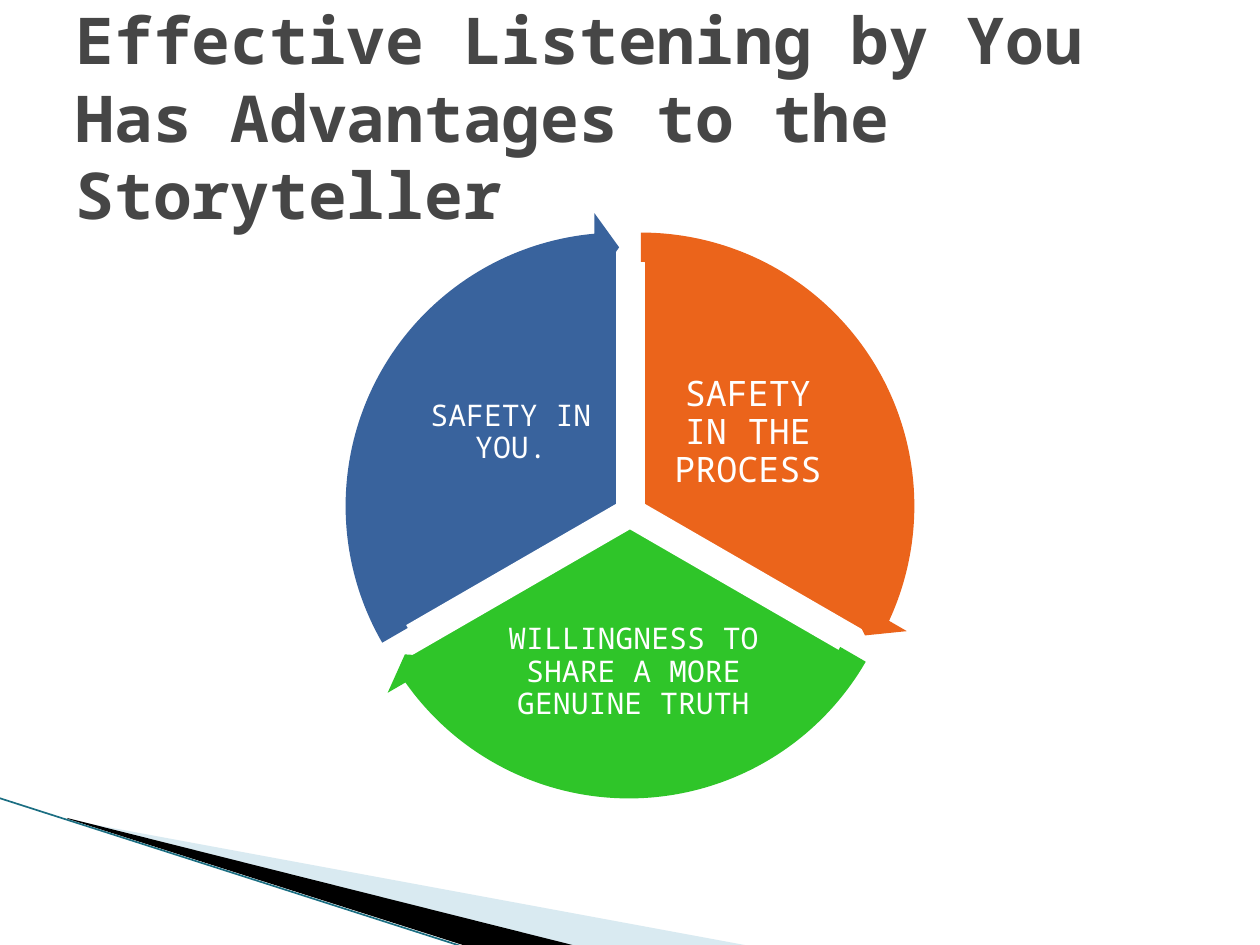
import pptx
import pptx.dml.color
import pptx.enum.shapes
import pptx.enum.text
import pptx.oxml
import pptx.oxml.ns
import pptx.util

SCALE = 914400 / 126
FONT = "Noto Sans Mono"
COLORS = {
    "title": "464646",
    "white": "FFFFFF",
    "black": "000000",
    "pale": "A0CBDC",
    "teal": "1B6E82",
    "orange": "EB641B",
    "green": "2FC529",
    "blue": "39639D",
}


def px(*values):
    return [pptx.util.Emu(round(value * SCALE)) for value in values]


def add_run(paragraph, text, size, color):
    run = paragraph.add_run()
    run.text = text
    run.font.name = FONT
    run.font.size = pptx.util.Pt(size)
    run.font.color.rgb = pptx.dml.color.RGBColor.from_string(COLORS[color])
    return run


presentation = pptx.Presentation()
presentation.slide_width, presentation.slide_height = px(1260, 945)
slide = presentation.slides.add_slide(presentation.slide_layouts[5])
shapes = slide.shapes

title = shapes.title
title.left, title.top, title.width, title.height = px(63, 38, 1134, 157)
title.text_frame.word_wrap = True
title.text_frame.auto_size = pptx.enum.text.MSO_AUTO_SIZE.NONE
title.text_frame.vertical_anchor = pptx.enum.text.MSO_ANCHOR.MIDDLE
paragraph = title.text_frame.paragraphs[0]
paragraph.alignment = pptx.enum.text.PP_ALIGN.LEFT
run = add_run(paragraph, "Effective Listening by You Has Advantages to the Storyteller", 36.9, "title")
run.font.bold = True

wedges = [
    ("pale", [(69, 820), (750, 946), (575, 946), (69, 819)]),
    ("black", [(67, 818), (576, 946), (469, 947), (68, 819)]),
]
for color, points in wedges:
    builder = shapes.build_freeform(*points[0], scale=SCALE)
    builder.add_line_segments(points[1:], close=True)
    wedge = builder.convert_to_shape()
    wedge.shadow.inherit = False
    wedge.fill.solid()
    wedge.fill.fore_color.rgb = pptx.dml.color.RGBColor.from_string(COLORS[color])
    wedge.line.fill.background()
    if color == "pale":
        color_element = wedge._element.spPr.find(".//" + pptx.oxml.ns.qn("a:srgbClr"))
        alpha = pptx.oxml.parse_xml(f'<a:alpha {pptx.oxml.ns.nsdecls("a")} val="40000"/>')
        color_element.append(alpha)

edge = shapes.add_connector(pptx.enum.shapes.MSO_CONNECTOR.STRAIGHT, *px(-1, 798, 467, 948))
edge.line.color.rgb = pptx.dml.color.RGBColor.from_string(COLORS["teal"])
edge.line.width = pptx.util.Pt(0.95)
edge._element.spPr.append(pptx.oxml.parse_xml(f'<a:effectLst {pptx.oxml.ns.nsdecls("a")}/>'))

sectors = [
    ("orange", (379, 244), (162, 18), (655, 355, 186, 156), 4, 20, "SAFETY IN THE PROCESS"),
    ("green", (368, 263), (18, 90), (493, 604, 281, 137), 3, 17,
     "WILLINGNESS TO SHARE A MORE GENUINE TRUTH"),
    ("blue", (358, 244), (90, 162), (418, 355, 186, 156), 3, 17, "SAFETY IN YOU."),
]
for color, corner, angles, box, inset, size, text in sectors:
    sector = shapes.add_shape(pptx.enum.shapes.MSO_SHAPE.PIE, *px(*corner, 524, 524))
    sector.shadow.inherit = False
    sector.adjustments[0], sector.adjustments[1] = angles
    sector.fill.solid()
    sector.fill.fore_color.rgb = pptx.dml.color.RGBColor.from_string(COLORS[color])
    sector.line.color.rgb = pptx.dml.color.RGBColor.from_string(COLORS["white"])
    sector.line.width = pptx.util.Pt(4.33)

    label = shapes.add_textbox(*px(*box))
    frame = label.text_frame
    frame.word_wrap = True
    frame.vertical_anchor = pptx.enum.text.MSO_ANCHOR.MIDDLE
    frame.margin_left, frame.margin_top, frame.margin_right, frame.margin_bottom = px(*[inset] * 4)
    paragraph = frame.paragraphs[0]
    paragraph.alignment = pptx.enum.text.PP_ALIGN.CENTER
    paragraph.line_spacing = 0.9
    add_run(paragraph, text, size, "white")

arrows = [
    ("orange", (347, 212), 14.73, 161.99),
    ("green", (335, 231), 86.72, 18),
    ("blue", (325, 212), 158.73, 90),
]
for color, corner, end_angle, start_angle in arrows:
    arrow = shapes.add_shape(pptx.enum.shapes.MSO_SHAPE.CIRCULAR_ARROW, *px(*corner, 588, 588))
    arrow.shadow.inherit = False
    for index, value in enumerate([0.05, 3.28, end_angle, start_angle, 0.06]):
        arrow.adjustments[index] = value
    arrow.fill.solid()
    arrow.fill.fore_color.rgb = pptx.dml.color.RGBColor.from_string(COLORS[color])
    arrow.line.fill.background()

presentation.save("out.pptx")
